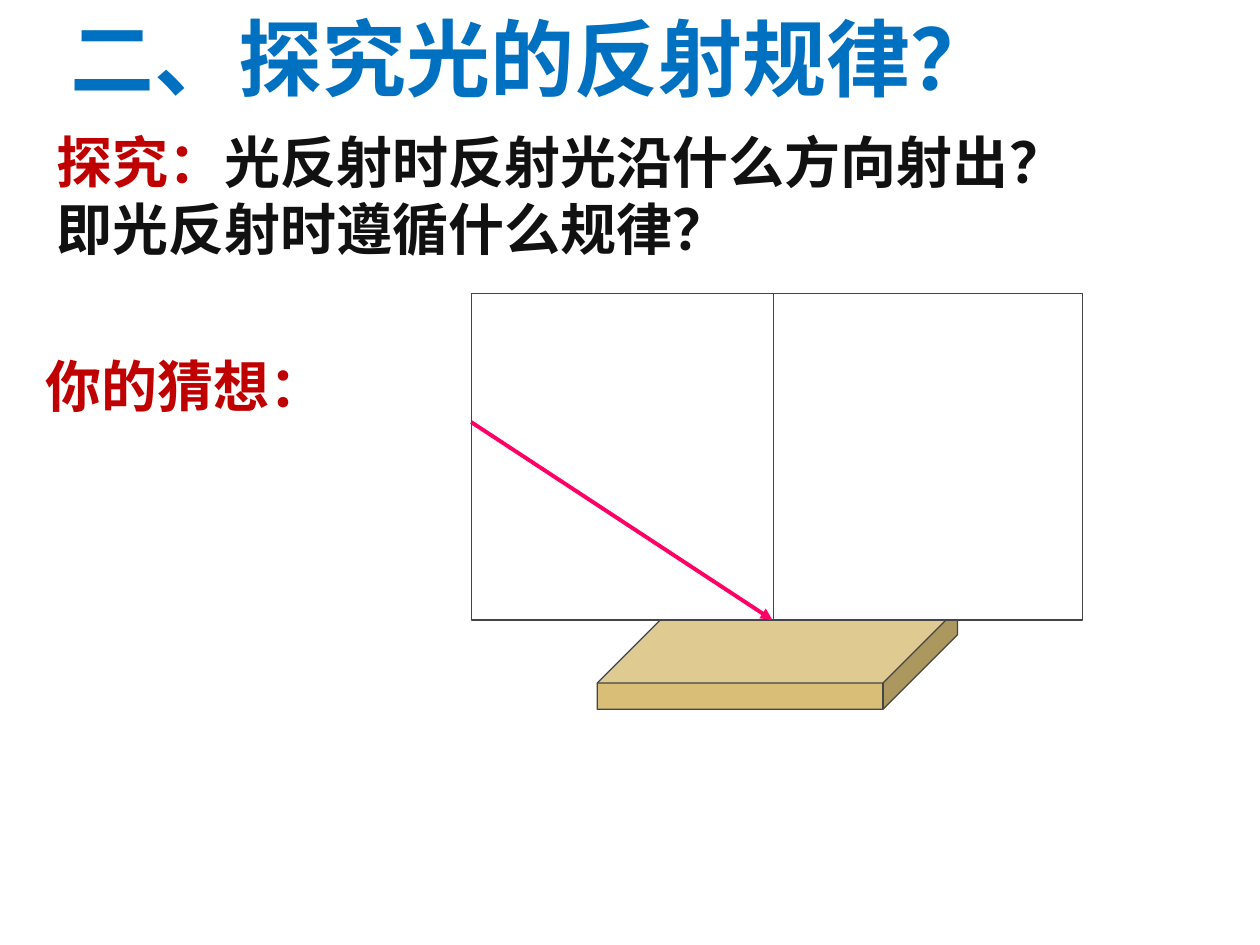
from lxml.etree import SubElement
from pptx import Presentation
from pptx.dml.color import RGBColor
from pptx.enum.shapes import MSO_CONNECTOR as CONN, MSO_SHAPE as SHAPE
from pptx.enum.text import MSO_ANCHOR as ANCHOR, MSO_AUTO_SIZE as FIT, PP_ALIGN as ALIGN
from pptx.oxml.ns import qn
from pptx.util import Inches, Pt

CJK = "Noto Sans CJK SC"
RED, BLUE, INK, EDGE = "C00000", "0070C0", "111111", "434547"


def rgb(code):
    """Return the colour for a hex string."""
    return RGBColor.from_string(code)


def place(sp, left, top, width, height):
    """Move and size a shape, in inches."""
    sp.left, sp.top = Inches(left), Inches(top)
    sp.width, sp.height = Inches(width), Inches(height)


def add_run(p, text, size, color, font):
    """Add one bold run to a paragraph."""
    r = p.add_run()
    r.text = text
    r.font.size, r.font.bold, r.font.name = Pt(size), True, font
    r.font.color.rgb = rgb(color)
    SubElement(r._r.get_or_add_rPr(), qn("a:ea")).set("typeface", CJK)


def fill_text(sp, lines, size, font, align=ALIGN.LEFT, anchor=ANCHOR.TOP):
    """Write lines, each a list of (text, colour) runs."""
    tf = sp.text_frame
    tf.word_wrap, tf.auto_size, tf.vertical_anchor = True, FIT.NONE, anchor
    for i, runs in enumerate(lines):
        p = tf.add_paragraph() if i else tf.paragraphs[0]
        p.alignment = align
        for text, color in runs:
            add_run(p, text, size, color, font)


def add_title(s, text):
    """Fill the title placeholder."""
    sp = s.shapes.title
    place(sp, 0, 0, 8.46, 0.9)
    fill_text(sp, [[(text, BLUE)]], 48, "Arial", ALIGN.CENTER)


def add_text(s, box, lines, font, anchor=ANCHOR.TOP):
    """Add a text box of 32 point lines."""
    sp = s.shapes.add_textbox(*map(Inches, box))
    fill_text(sp, lines, 32, font, anchor=anchor)


def add_solid(s, kind, box, color):
    """Add a filled shape with a thin dark edge."""
    sp = s.shapes.add_shape(kind, *map(Inches, box))
    sp.shadow.inherit = False
    sp.fill.solid()
    sp.fill.fore_color.rgb = rgb(color)
    sp.line.color.rgb, sp.line.width = rgb(EDGE), Pt(0.75)
    return sp


def add_ray(s, start, end):
    """Add a light ray with an arrowhead at its end."""
    ray = s.shapes.add_connector(CONN.STRAIGHT, *map(Inches, start + end))
    ray.line.color.rgb, ray.line.width = rgb("FF0066"), Pt(2.25)
    SubElement(ray.line._get_or_add_ln(), qn("a:tailEnd")).set("type", "triangle")
    SubElement(ray._element.spPr, qn("a:effectLst"))


def main():
    """Build the slide on the reflection of light."""
    prs = Presentation()
    prs.slide_width, prs.slide_height = Inches(10), Inches(7.5)
    s = prs.slides.add_slide(prs.slide_layouts[5])
    mirror = add_solid(s, SHAPE.CUBE, (4.74, 4.83, 2.86, 0.8), "D8BE76")
    mirror.adjustments[0] = 0.74
    for left in (3.74, 6.14):
        add_solid(s, SHAPE.RECTANGLE, (left, 2.33, 2.45, 2.59), "FFFFFF")
    add_ray(s, (3.74, 3.35), (6.13, 4.92))
    add_title(s, "二、探究光的反射规律？")
    question = [
        [("探究：", RED), ("光反射时反射光沿什么方向射出？", INK)],
        [("即光反射时遵循什么规律？", INK)],
    ]
    add_text(s, (0.35, 0.92, 9.55, 1.25), question, CJK, ANCHOR.MIDDLE)
    add_text(s, (0.26, 2.74, 2.39, 0.63), [[("你的猜想：", RED)]], "Calibri")
    prs.save("out.pptx")


if __name__ == "__main__":
    main()
